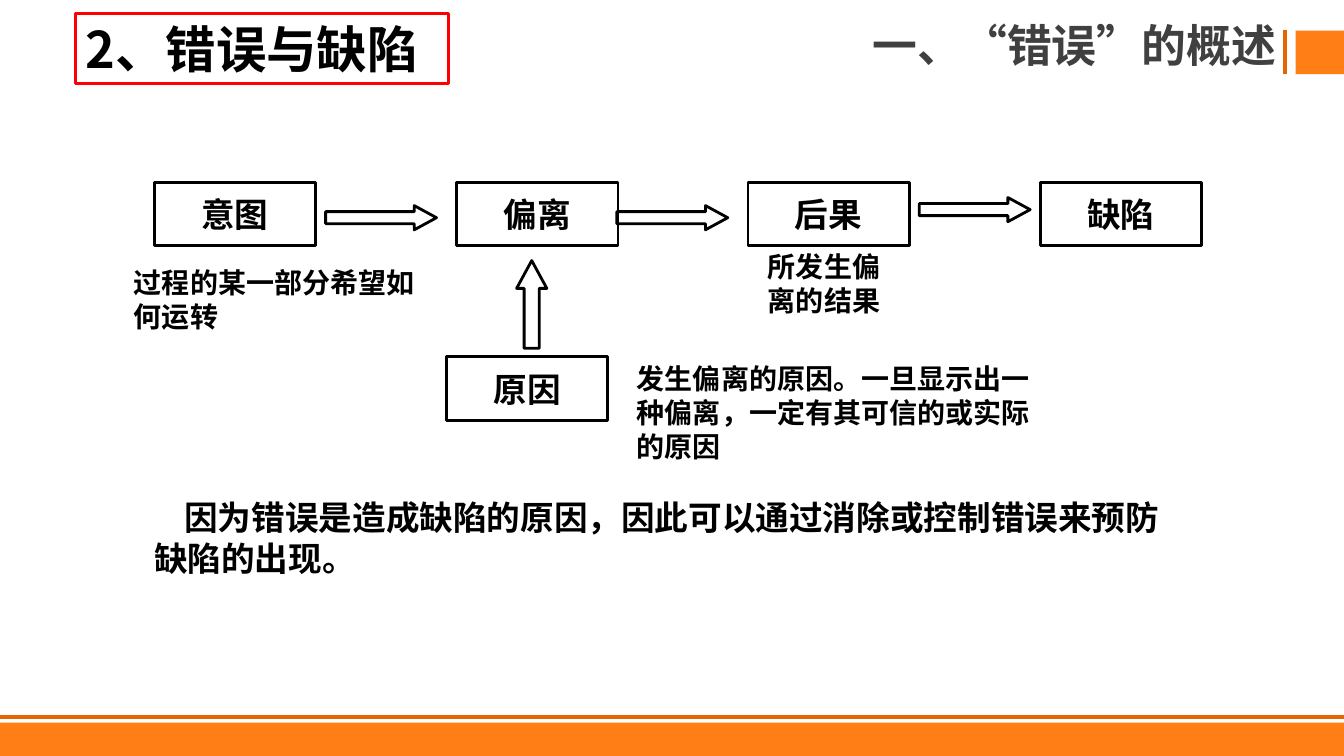
from dataclasses import dataclass
from lxml import etree
from pptx import Presentation, util as u
from pptx.dml.color import RGBColor
from pptx.enum import shapes as sh, text as tx
from pptx.oxml.ns import qn


@dataclass(frozen=True)
class Theme:
    """Hold the colours, sizes and font of the slide."""
    ink: str = "000000"
    grey: str = "404040"
    red: str = "FF0000"
    fill: str = "FF7E16"
    rule: str = "E56500"
    font: str = "Noto Sans CJK SC"
    title: int = 36
    head: int = 32
    label: int = 24
    note: int = 20
    edge: int = 2
    bar: int = 3


T = Theme()
WIDE, HIGH = u.Inches(13.33), u.Inches(7.5)
COL, ROW = WIDE / 100, HIGH / 100
KIND = sh.MSO_SHAPE
MID = tx.MSO_ANCHOR.MIDDLE
ALIGN = tx.PP_ALIGN

STEPS = [("意图", 11.48, 24.13), ("偏离", 33.98, 24.13),
         ("后果", 55.65, 24.13), ("缺陷", 77.4, 24.13),
         ("原因", 33.23, 47.2)]
ARROWS = [(KIND.RIGHT_ARROW, (24.23, 27.2, 8.25, 3.2)),
          (KIND.RIGHT_ARROW, (45.9, 27.2, 8.25, 3.2)),
          (KIND.RIGHT_ARROW, (68.4, 26.13, 8.25, 3.2)),
          (KIND.UP_ARROW, (38.44, 34.47, 2.25, 11.6))]
NOTES = [("过程的某一部分希望如何运转", (9.23, 34.53, 23.18, 10.27)),
         ("发生偏离的原因。一旦显示出一种偏离，一定有其可信的或实际的原因",
          (46.65, 47.2, 32.33, 14.67)),
         ("所发生偏离的结果", (56.4, 32.4, 10.5, 10.27))]
CLOSE = "因为错误是造成缺陷的原因，因此可以通过消除或控制错误来预防缺陷的出现。"


def place(area):
    """Turn left, top, width and height in grid units into lengths."""
    return [u.Emu(round(n * s)) for n, s in zip(area, (COL, ROW, COL, ROW))]


def put(target, **values):
    """Set each named format value on the target."""
    for name, value in values.items():
        setattr(target, name, value)


def write(shape, words, size, color=T.ink, anchor=tx.MSO_ANCHOR.TOP, **form):
    """Write one bold paragraph into a shape."""
    frame = shape.text_frame
    put(frame, word_wrap=True, vertical_anchor=anchor)
    para = frame.paragraphs[0]
    values = {"alignment": ALIGN.LEFT, "line_spacing": u.Pt(round(size * 1.2))}
    put(para, **{**values, **form})
    run = para.add_run()
    run.text = words
    put(run.font, name=T.font, size=u.Pt(size), bold=True)
    run.font.color.rgb = RGBColor.from_string(color)
    east = etree.SubElement(run.font._element, qn("a:ea"))
    east.set("typeface", T.font)
    return para


def block(slide, kind, area, fill=None, edge=None):
    """Draw a preset shape with an optional fill and edge."""
    shape = slide.shapes.add_shape(kind, *place(area))
    shape.shadow.inherit = False
    if fill:
        shape.fill.solid()
        shape.fill.fore_color.rgb = RGBColor.from_string(fill)
    else:
        shape.fill.background()
    if edge:
        shape.line.color.rgb = RGBColor.from_string(edge)
        shape.line.width = u.Pt(T.edge)
    else:
        shape.line.fill.background()
    return shape


def rule(slide, start, end):
    """Draw a straight orange line between two grid points."""
    ends = place((*start, *end))
    line = slide.shapes.add_connector(sh.MSO_CONNECTOR.STRAIGHT, *ends)
    line.line.color.rgb = RGBColor.from_string(T.rule)
    line.line.width = u.Pt(T.bar)
    etree.SubElement(line._element.spPr, qn("a:effectLst"))


def note(slide, words, area, size, **form):
    """Add a wrapped text box."""
    box = slide.shapes.add_textbox(*place(area))
    return write(box, words, size, **form)


def arrow(slide, kind, area):
    """Draw a hollow block arrow."""
    shape = block(slide, kind, area, edge=T.ink)
    shape.adjustments[0] = 0.5
    shape.adjustments[1] = 0.92


def frame(slide):
    """Draw the footer band, the corner mark and both headings."""
    block(slide, KIND.RECTANGLE, (0, 95.6, 100, 4.4), T.fill)
    rule(slide, (0, 94.8), (100, 94.8))
    block(slide, KIND.RECTANGLE, (96.41, 4.07, 3.59, 5.73), T.fill)
    rule(slide, (95.63, 9.73), (95.63, 4))
    note(slide, "一、“错误”的概述", (43.88, 3.47, 51.83, 5.73), T.head,
         color=T.grey, anchor=MID, alignment=ALIGN.RIGHT,
         line_spacing=0.9, space_before=u.Pt(10))
    title = block(slide, KIND.RECTANGLE, (5.63, 1.73, 27.75, 9.33), edge=T.red)
    write(title, "2、错误与缺陷", T.title, anchor=MID)


def flow(slide):
    """Draw the steps, the arrows and the notes."""
    for words, left, top in STEPS:
        box = block(slide, KIND.RECTANGLE, (left, top, 12, 8.4), edge=T.ink)
        write(box, words, T.label, anchor=MID, alignment=ALIGN.CENTER)
    for kind, area in ARROWS:
        arrow(slide, kind, area)
    for words, area in NOTES:
        note(slide, words, area, T.note)
    para = note(slide, CLOSE, (10.73, 65.07, 78.6, 12), T.label)
    para._p.get_or_add_pPr().set("indent", str(u.Inches(0.3)))


def main():
    """Build the slide and save it."""
    deck = Presentation()
    put(deck, slide_width=WIDE, slide_height=HIGH)
    slide = deck.slides.add_slide(deck.slide_layouts[6])
    frame(slide)
    flow(slide)
    deck.save("out.pptx")


if __name__ == "__main__":
    main()
